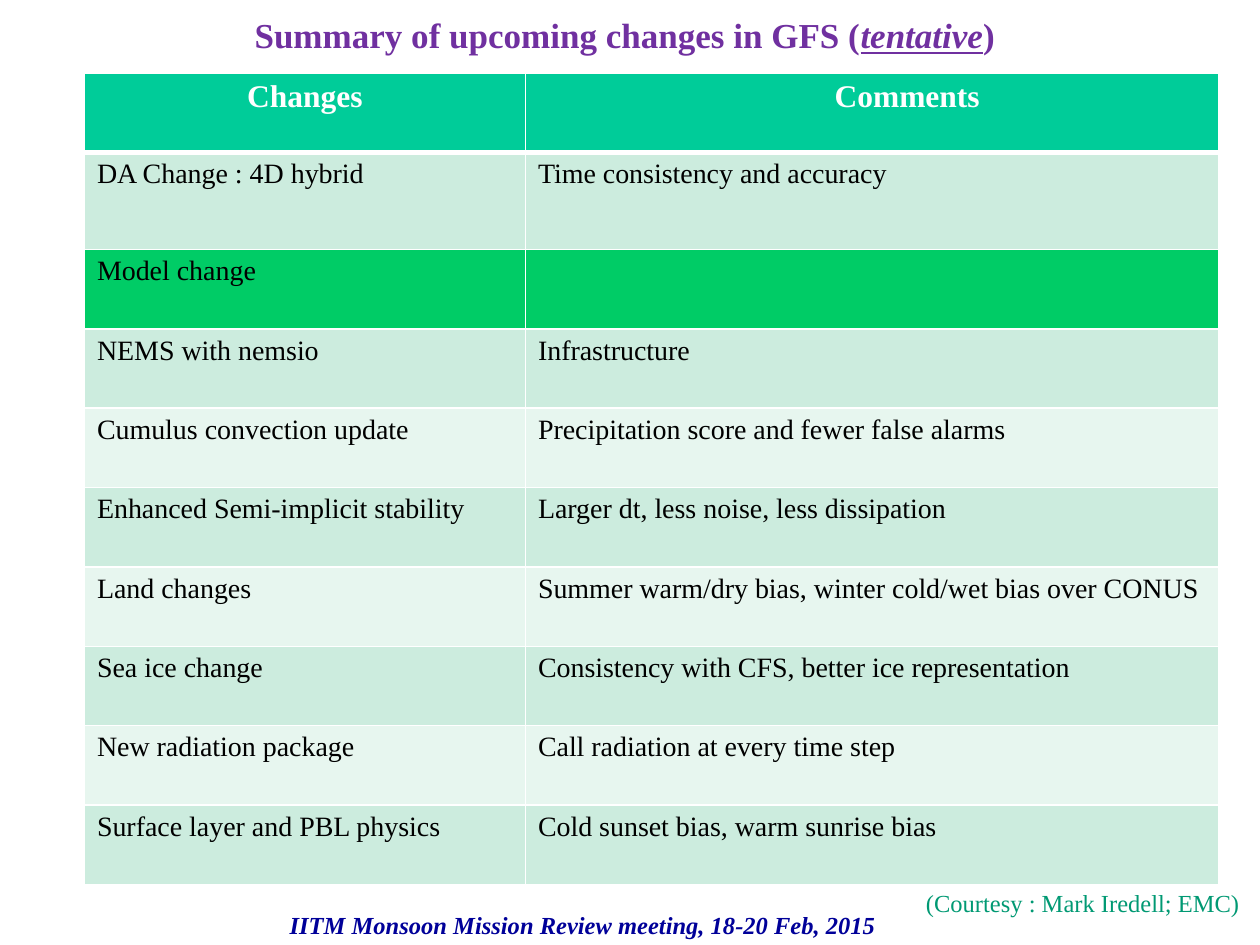
from dataclasses import dataclass

from lxml.etree import SubElement
from pptx import Presentation
from pptx.dml.color import RGBColor
from pptx.enum.text import MSO_ANCHOR, MSO_AUTO_SIZE, PP_ALIGN
from pptx.oxml.ns import qn
from pptx.util import Inches, Pt

TYPEFACE = "Times New Roman"
WHITE = "FFFFFF"
HEADER_GREEN = "00CC99"
SECTION_GREEN = "00CC66"
BANDS = ("E7F6EF", "CCECDE")


@dataclass
class Change:
    name: str
    comment: str = ""
    height: float = 0.63


@dataclass
class Caption:
    text: str
    left: float
    top: float
    width: float
    height: float
    color: str
    align: PP_ALIGN = PP_ALIGN.LEFT
    emphasis: bool = False
    wrap: bool = False


CHANGES = [
    Change("DA Change : 4D hybrid", "Time consistency and accuracy", 0.77),
    Change("Model change"),
    Change("NEMS with nemsio", "Infrastructure"),
    Change("Cumulus convection update", "Precipitation score and fewer false alarms"),
    Change("Enhanced Semi-implicit stability", "Larger dt, less noise, less dissipation"),
    Change("Land changes", "Summer warm/dry bias, winter cold/wet bias over CONUS"),
    Change("Sea ice change", "Consistency with CFS, better ice representation"),
    Change("New radiation package", "Call radiation at every time step"),
    Change("Surface layer and PBL physics", "Cold sunset bias, warm sunrise bias"),
]
CAPTIONS = [
    Caption("IITM Monsoon Mission Review meeting, 18-20 Feb, 2015",
            0.67, 7.17, 7.91, 0.33, "000099", PP_ALIGN.CENTER, True, True),
    Caption("(Courtesy : Mark Iredell; EMC)", 7.25, 7, 2.71, 0.34, "009973"),
]


def rgb(color: str) -> RGBColor:
    return RGBColor.from_string(color)


def style_run(run, size: float, color: str, bold: bool = False, italic: bool = False) -> None:
    run.font.name = TYPEFACE
    run.font.size = Pt(size)
    run.font.color.rgb = rgb(color)
    run.font.bold = bold
    run.font.italic = italic


def place(shape, left: float, top: float, width: float, height: float) -> None:
    shape.left, shape.top = Inches(left), Inches(top)
    shape.width, shape.height = Inches(width), Inches(height)


def add_title(slide) -> None:
    title = slide.shapes.title
    place(title, 1.92, 0.06, 6.18, 0.44)
    frame = title.text_frame
    frame.word_wrap = False
    frame.auto_size = MSO_AUTO_SIZE.SHAPE_TO_FIT_TEXT
    frame.vertical_anchor = MSO_ANCHOR.TOP
    heading = frame.paragraphs[0]
    heading.alignment = PP_ALIGN.LEFT
    for words, tentative in (("Summary of upcoming changes in GFS (", False),
                             ("tentative", True), (")", False)):
        run = heading.add_run()
        run.text = words
        style_run(run, 20, "7030A0", bold=True, italic=tentative)
        run.font.underline = tentative


def add_caption(slide, caption: Caption) -> None:
    box = slide.shapes.add_textbox(Inches(caption.left), Inches(caption.top),
                                   Inches(caption.width), Inches(caption.height))
    box.text_frame.word_wrap = caption.wrap
    box.text_frame.text = caption.text
    paragraph = box.text_frame.paragraphs[0]
    paragraph.alignment = caption.align
    style_run(paragraph.runs[0], 14, caption.color, caption.emphasis, caption.emphasis)


def add_borders(cell, bottom_width: float) -> None:
    properties = cell._tc.get_or_add_tcPr()
    for position, (side, width) in enumerate(
            (("lnL", 1), ("lnR", 1), ("lnT", 1), ("lnB", bottom_width))):
        line = SubElement(properties, qn(f"a:{side}"), w=str(Pt(width)))
        fill = SubElement(line, qn("a:solidFill"))
        SubElement(fill, qn("a:srgbClr"), val=WHITE)
        properties.remove(line)
        properties.insert(position, line)


def fill_cell(cell, text: str, fill: str, header: bool = False) -> None:
    cell.fill.solid()
    cell.fill.fore_color.rgb = rgb(fill)
    add_borders(cell, 3 if header else 1)
    cell.text_frame.text = text
    paragraph = cell.text_frame.paragraphs[0]
    if header:
        paragraph.alignment = PP_ALIGN.CENTER
    for run in paragraph.runs:
        style_run(run, 18 if header else 16, WHITE if header else "000000", bold=header)


def add_changes_table(slide) -> None:
    rows = [Change("Changes", "Comments"), *CHANGES]
    total_height = sum(row.height for row in rows)
    table = slide.shapes.add_table(len(rows), 2, Inches(0.67), Inches(0.58),
                                   Inches(9), Inches(total_height)).table
    for column, width in zip(table.columns, (3.5, 5.5)):
        column.width = Inches(width)
    for index, change in enumerate(rows):
        table.rows[index].height = Inches(change.height)
        header = index == 0
        if header:
            fill = HEADER_GREEN
        else:
            fill = BANDS[index % 2] if change.comment else SECTION_GREEN
        for column, text in enumerate((change.name, change.comment)):
            fill_cell(table.cell(index, column), text, fill, header)
    table.cell(0, 1).margin_left = Inches(0.66)


def main() -> None:
    presentation = Presentation()
    presentation.slide_width = Inches(10)
    presentation.slide_height = Inches(7.5)
    slide = presentation.slides.add_slide(presentation.slide_layouts[5])
    add_title(slide)
    add_changes_table(slide)
    for caption in CAPTIONS:
        add_caption(slide, caption)
    presentation.save("out.pptx")


if __name__ == "__main__":
    main()
